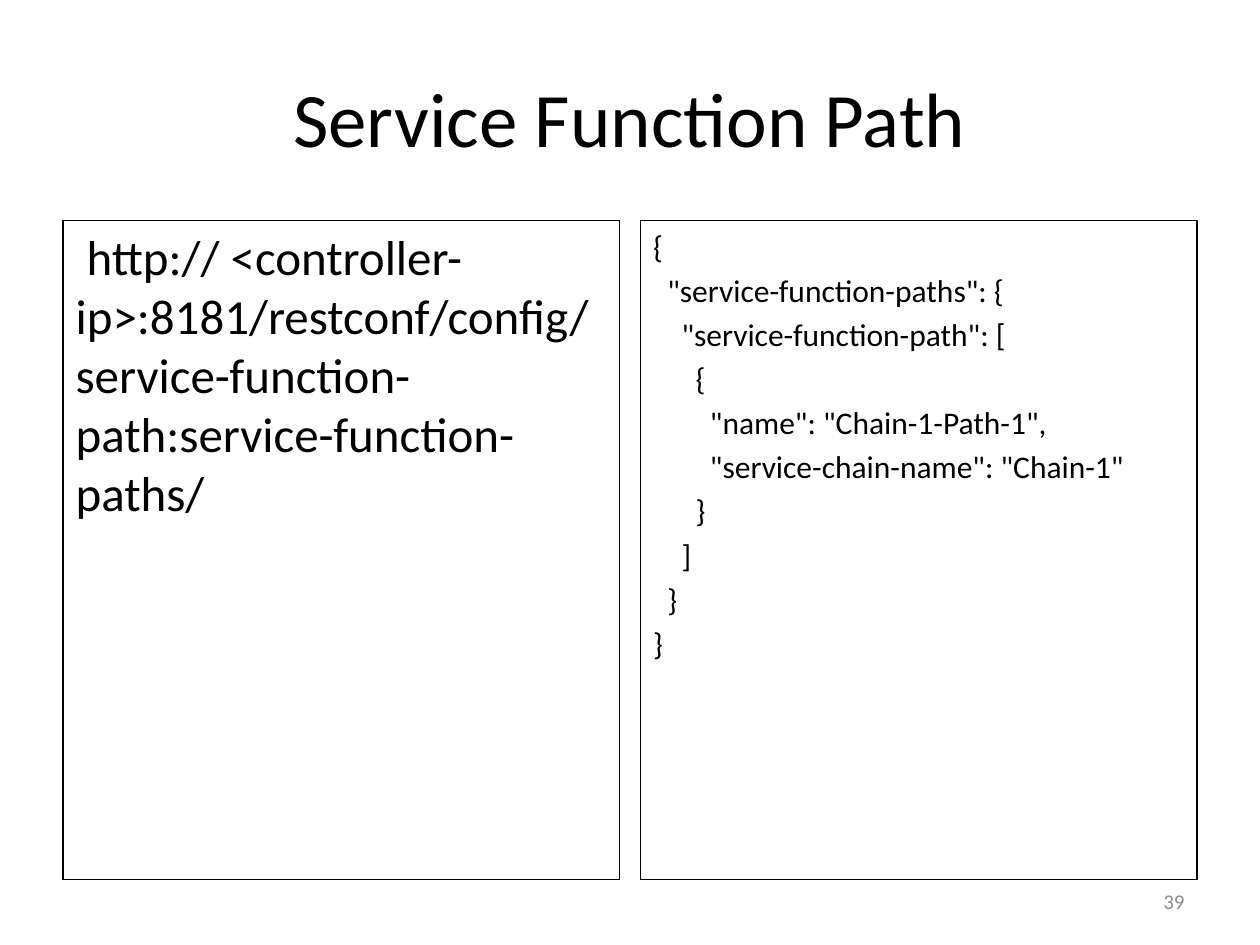
from dataclasses import dataclass

from lxml.etree import SubElement as Sub
from pptx import Presentation
from pptx.dml.color import RGBColor as RGB
from pptx.enum.text import MSO_ANCHOR as Anchor, MSO_AUTO_SIZE as Fit, PP_ALIGN as Align
from pptx.oxml.ns import qn
from pptx.util import Pt


@dataclass(frozen=True)
class Theme:
    font: str = "Calibri"
    ink: RGB = RGB(0, 0, 0)
    gray: RGB = RGB(0x8C, 0x8C, 0x8C)
    paper: RGB = RGB(255, 255, 255)
    head: int = 44
    link: int = 28
    code: int = 18
    note: int = 12
    rule: float = 0.75


THEME = Theme()
URL = " http:// <controller-ip>:8181/restconf/config/service-function-path:service-function-paths/"
CODE = """{
  "service-function-paths": {
    "service-function-path": [
      {
        "name": "Chain-1-Path-1",
        "service-chain-name": "Chain-1"
      }
    ]
  }
}"""


def place(shape, box):
    shape.left, shape.top, shape.width, shape.height = (Pt(v) for v in box)


def style(frame, size, color, align):
    frame.word_wrap = True
    frame.auto_size = Fit.NONE
    for para in frame.paragraphs:
        para.alignment = align
        for run in para.runs:
            font = run.font
            font.name, font.size = THEME.font, Pt(size)
            font.color.rgb = color


def add_title(slide, box, text):
    title = slide.shapes.title
    place(title, box)
    title.text_frame.text = text
    title.text_frame.vertical_anchor = Anchor.MIDDLE
    style(title.text_frame, THEME.head, THEME.ink, Align.CENTER)


def add_panel(holder, box, text, size, level=0):
    place(holder, box)
    holder.line.color.rgb = THEME.ink
    holder.line.width = Pt(THEME.rule)
    frame = holder.text_frame
    frame.text = text
    # Plain lines: no bullet and no hanging indent
    for para in frame.paragraphs:
        para.level = level
        props = para._p.get_or_add_pPr()
        props.set("marL", "0")
        props.set("indent", "0")
        Sub(props, qn("a:buNone"))
    frame.paragraphs[0].space_before = Pt(0)
    style(frame, size, THEME.ink, Align.LEFT)


def add_number(slide, box, text):
    note = slide.shapes.add_textbox(*(Pt(v) for v in box))
    note.text_frame.text = text
    note.text_frame.vertical_anchor = Anchor.MIDDLE
    style(note.text_frame, THEME.note, THEME.gray, Align.RIGHT)


def main():
    deck = Presentation()
    deck.slide_width, deck.slide_height = Pt(720), Pt(540)
    slide = deck.slides.add_slide(deck.slide_layouts[3])
    slide.background.fill.solid()
    slide.background.fill.fore_color.rgb = THEME.paper

    # Two equal columns between the side margins
    edge, gap, top, high = 36, 12, 126, 376.6
    wide = 720 - 2 * edge
    col = (wide - gap) / 2

    add_title(slide, (edge, 21.6, wide, 90), "Service Function Path")
    left, right = slide.placeholders[1], slide.placeholders[2]
    add_panel(left, (edge, top, col, high), URL, THEME.link, level=1)
    add_panel(right, (edge + col + gap, top, col, high), CODE, THEME.code)
    add_number(slide, (edge + wide - 168, 500.5, 168, 28.8), "39")

    deck.save("out.pptx")


if __name__ == "__main__":
    main()
